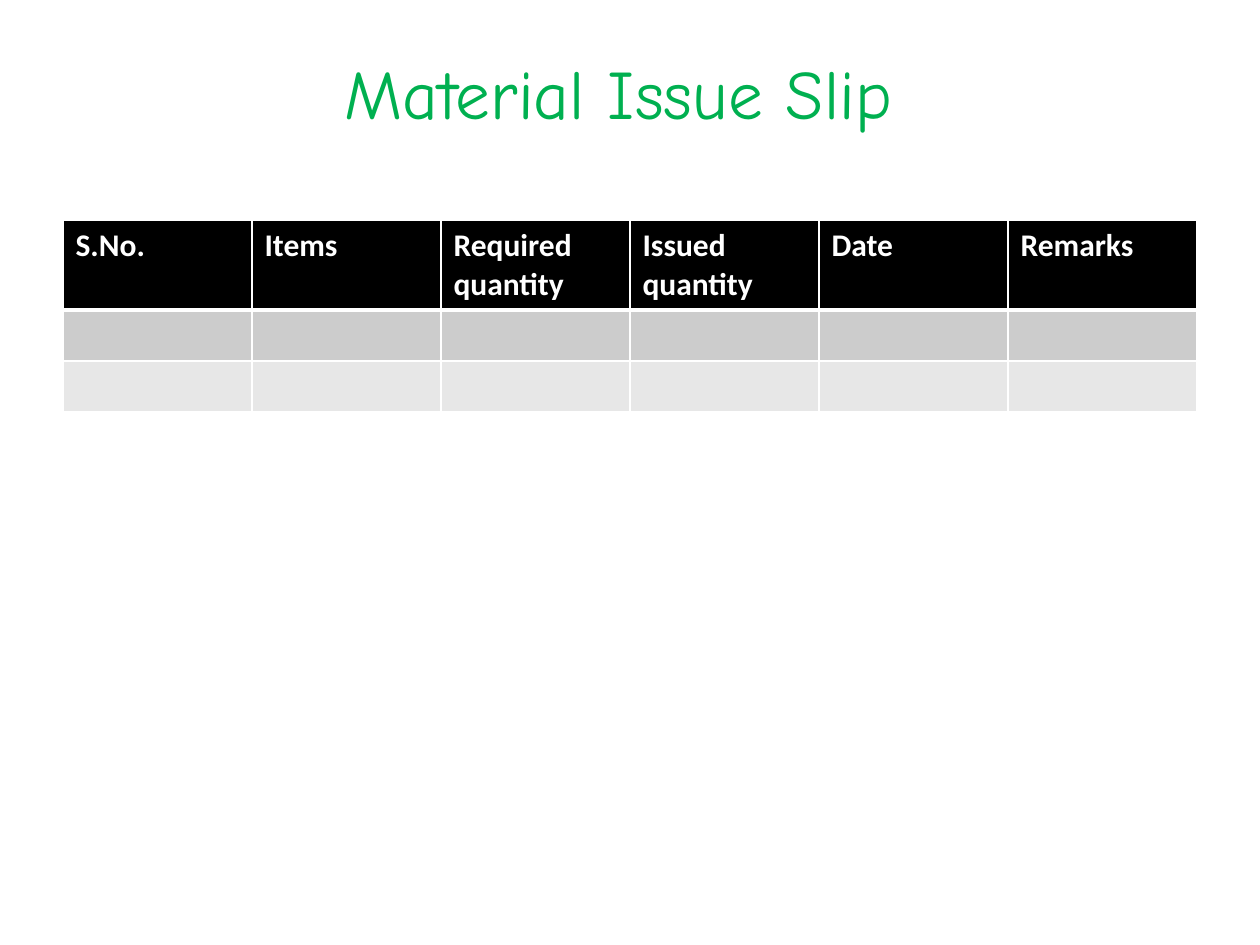
"""Build the Material Issue Slip slide with its blank issue table."""
from lxml.etree import SubElement
from pptx import Presentation
from pptx.dml.color import RGBColor
from pptx.enum.text import MSO_ANCHOR, PP_ALIGN
from pptx.oxml.ns import qn
from pptx.util import Pt

TITLE = "Material Issue Slip"
HEADINGS = ["S.No.", "Items", "Required quantity", "Issued quantity", "Date", "Remarks"]
ROWS = [
    {"texts": HEADINGS, "fill": "000000", "height": 51.1, "top": 1, "bottom": 3},
    {"texts": [""] * len(HEADINGS), "fill": "CCCCCC", "height": 29.2, "top": 3, "bottom": 1},
    {"texts": [""] * len(HEADINGS), "fill": "E7E7E7", "height": 29.2, "top": 1, "bottom": 1},
]
LEFT, WIDTH = 36, 648
TITLE_TOP, TITLE_HEIGHT = 21.6, 56.2
TABLE_TOP = 126
WHITE, GREEN = "FFFFFF", "00B050"


def rgb(value):
    return RGBColor.from_string(value)


def write(frame, text, *, size, font, color, bold=False, align=PP_ALIGN.LEFT):
    paragraph = frame.paragraphs[0]
    paragraph.alignment = align
    run = paragraph.add_run()
    run.text = text
    run.font.size = Pt(size)
    run.font.name = font
    run.font.bold = bold
    run.font.color.rgb = rgb(color)


def set_borders(cell, color, **widths):
    properties = cell._tc.get_or_add_tcPr()
    for side, width in widths.items():
        line = SubElement(properties, qn(f"a:ln{side}"), w=str(int(Pt(width))))
        SubElement(SubElement(line, qn("a:solidFill")), qn("a:srgbClr"), val=color)


def add_title(slide):
    title = slide.shapes.title
    title.left, title.top = Pt(LEFT), Pt(TITLE_TOP)
    title.width, title.height = Pt(WIDTH), Pt(TITLE_HEIGHT)
    frame = title.text_frame
    frame.word_wrap = True
    frame.vertical_anchor = MSO_ANCHOR.MIDDLE
    frame.margin_top, frame.margin_right = Pt(9.6), Pt(20.8)
    write(frame, TITLE, size=39.6, font="Comic Neue", color=GREEN, align=PP_ALIGN.CENTER)


def add_issue_table(slide):
    height = sum(row["height"] for row in ROWS)
    table = slide.shapes.add_table(
        len(ROWS), len(HEADINGS), Pt(LEFT), Pt(TABLE_TOP), Pt(WIDTH), Pt(height)
    ).table
    for column in table.columns:
        column.width = Pt(WIDTH / len(HEADINGS))
    for table_row, row in zip(table.rows, ROWS):
        table_row.height = Pt(row["height"])
        for cell, text in zip(table_row.cells, row["texts"]):
            set_borders(cell, WHITE, L=1, R=1, T=row["top"], B=row["bottom"])
            cell.fill.solid()
            cell.fill.fore_color.rgb = rgb(row["fill"])
            if text:
                write(cell.text_frame, text, size=18, font="Calibri", color=WHITE, bold=True)


def main():
    presentation = Presentation()
    presentation.slide_width, presentation.slide_height = Pt(720), Pt(540)
    slide = presentation.slides.add_slide(presentation.slide_layouts[5])
    add_title(slide)
    add_issue_table(slide)
    presentation.save("out.pptx")


if __name__ == "__main__":
    main()
